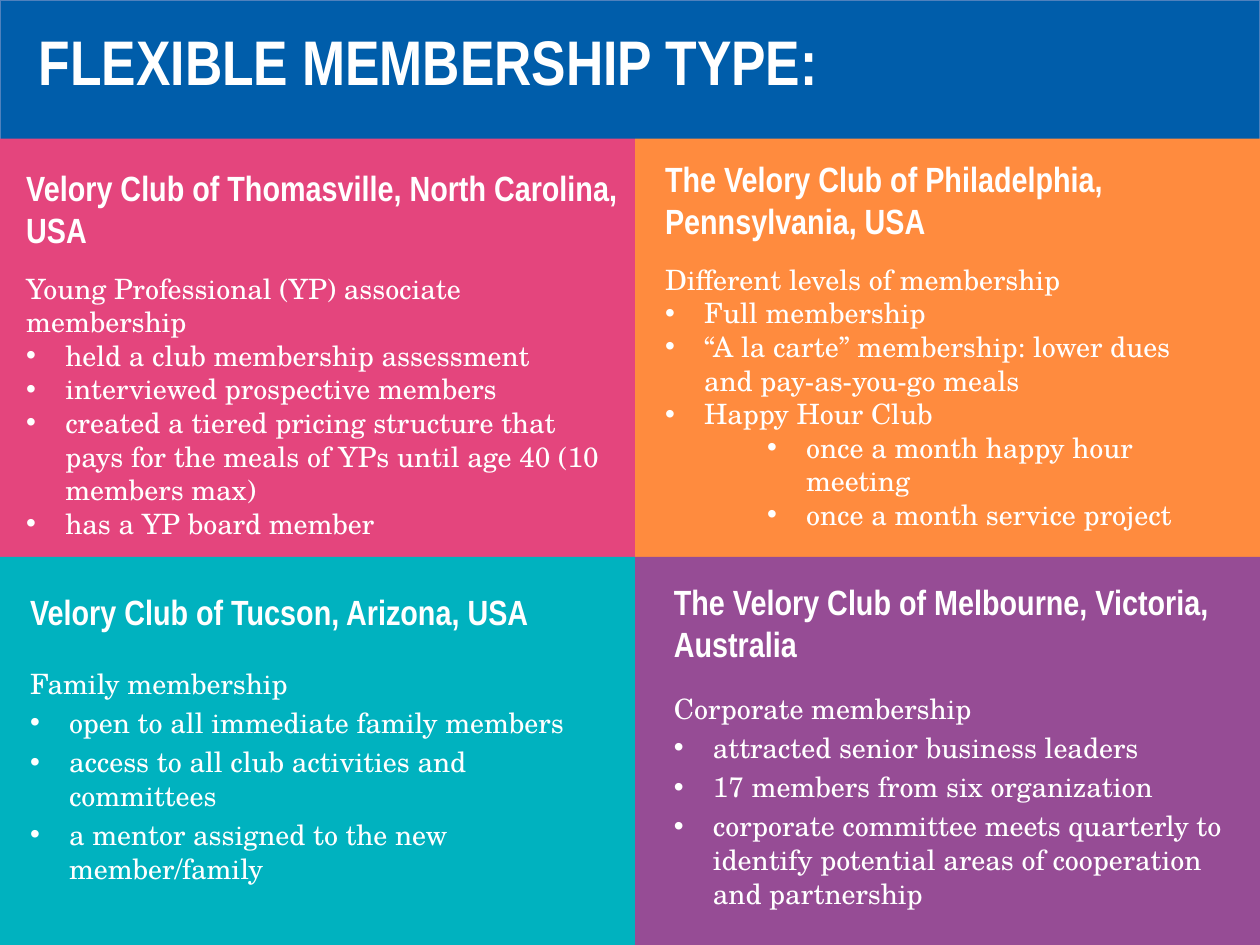
from dataclasses import dataclass

from lxml.etree import SubElement
from pptx import Presentation
from pptx.dml.color import RGBColor
from pptx.enum.shapes import MSO_SHAPE
from pptx.oxml.ns import qn
from pptx.util import Inches, Pt

SLIDE_WIDTH, SLIDE_HEIGHT = Inches(10), Inches(7.5)
COLORS = {
    "header": "005DAA",
    "header_line": "4F81BD",
    "pink": "E4457D",
    "orange": "FF8B3E",
    "teal": "00B2BF",
    "purple": "964C95",
    "text": "FFFFFF",
}
HEADING_FONT, BODY_FONT = "Arial Narrow", "TeX Gyre Schola"

# Panel grid, in percent of the slide
COLUMNS = (0, 50.4, 100)
ROWS = (14.67, 58.93, 100)
BULLET_HANG = Inches(0.31)
LEVEL_INDENTS = (Inches(0.31), Inches(1.12))


@dataclass
class Club:
    color: str
    column: int
    row: int
    text_box: tuple  # left, top, width, height in percent of the slide
    heading: str
    membership: str
    bullets: tuple  # (level, text)
    heading_gap: float = 12
    body_gap: float = 0


CLUBS = (
    Club("pink", 0, 0, (1.1, 16.93, 49.2, 42.67),
         "Velory Club of Thomasville, North Carolina, USA",
         "Young Professional (YP) associate membership",
         ((0, "held a club membership assessment"),
          (0, "interviewed prospective members"),
          (0, "created a tiered pricing structure that\n"
              "pays for the meals of YPs until age 40 (10 members max)"),
          (0, "has a YP board member"))),
    Club("orange", 1, 0, (51.8, 16, 46.1, 39.6),
         "The Velory Club of Philadelphia, Pennsylvania, USA",
         "Different levels of membership",
         ((0, "Full membership"),
          (0, "“A la carte” membership: lower dues and pay-as-you-go meals"),
          (0, "Happy Hour Club"),
          (1, "once a month happy hour meeting"),
          (1, "once a month service project"))),
    Club("teal", 0, 1, (1.4, 61.87, 46.6, 37.2),
         "Velory Club of Tucson, Arizona, USA",
         "Family membership",
         ((0, "open to all immediate family members"),
          (0, "access to all club activities and committees"),
          (0, "a mentor assigned to the new member/family")),
         heading_gap=16, body_gap=3.2),
    Club("purple", 1, 1, (52.5, 60.8, 47.5, 37.6),
         "The Velory Club of Melbourne, Victoria, Australia",
         "Corporate membership",
         ((0, "attracted senior business leaders"),
          (0, "17 members from six organization"),
          (0, "corporate committee meets quarterly to identify potential "
              "areas of cooperation and partnership")),
         body_gap=3.2),
)


def to_lengths(box):
    """Turn a box in percent of the slide into lengths."""
    left, top, width, height = box
    return (int(SLIDE_WIDTH * left / 100), int(SLIDE_HEIGHT * top / 100),
            int(SLIDE_WIDTH * width / 100), int(SLIDE_HEIGHT * height / 100))


def add_rectangle(slide, box, color, line_color=None):
    shape = slide.shapes.add_shape(MSO_SHAPE.RECTANGLE, *to_lengths(box))
    shape.shadow.inherit = False
    shape.fill.solid()
    shape.fill.fore_color.rgb = RGBColor.from_string(COLORS[color])
    if line_color:
        shape.line.color.rgb = RGBColor.from_string(COLORS[line_color])
        shape.line.width = Pt(0.75)
    else:
        shape.line.fill.background()


def add_text_frame(slide, box):
    text_frame = slide.shapes.add_textbox(*to_lengths(box)).text_frame
    text_frame.word_wrap = True
    return text_frame


def add_runs(paragraph, text, font_name, size, bold=False):
    """Add one run per line of the text, with line breaks between them."""
    for index, line in enumerate(text.split("\n")):
        if index:
            paragraph.add_line_break()
        run = paragraph.add_run()
        run.text = line
        run.font.name = font_name
        run.font.size = Pt(size)
        run.font.bold = bold
        run.font.color.rgb = RGBColor.from_string(COLORS["text"])


def add_bullet(paragraph, level):
    paragraph.level = level
    properties = paragraph._p.get_or_add_pPr()
    properties.set("marL", str(LEVEL_INDENTS[level]))
    properties.set("indent", str(-BULLET_HANG))
    SubElement(properties, qn("a:buFont")).set("typeface", "Arial")
    SubElement(properties, qn("a:buChar")).set("char", "•")


def add_header(slide, box, title_box):
    add_rectangle(slide, box, "header", "header_line")
    paragraph = add_text_frame(slide, title_box).paragraphs[0]
    paragraph.line_spacing = 0.8
    add_runs(paragraph, "FLEXIBLE MEMBERSHIP TYPE:", HEADING_FONT, 36, bold=True)


def add_club_panel(slide, box, club):
    add_rectangle(slide, box, club.color)
    text_frame = add_text_frame(slide, club.text_box)
    heading = text_frame.paragraphs[0]
    heading.space_after = Pt(club.heading_gap)
    add_runs(heading, club.heading, HEADING_FONT, 20, bold=True)

    for level, text in ((None, club.membership), *club.bullets):
        paragraph = text_frame.add_paragraph()
        if level is not None:
            add_bullet(paragraph, level)
        paragraph.space_before = Pt(club.body_gap)
        add_runs(paragraph, text, BODY_FONT, 16)


def main():
    presentation = Presentation()
    presentation.slide_width, presentation.slide_height = SLIDE_WIDTH, SLIDE_HEIGHT
    slide = presentation.slides.add_slide(presentation.slide_layouts[6])

    add_header(slide, (0, 0, 100, 18.8), (2.1, 3.33, 95.9, 12.8))
    for club in CLUBS:
        left, right = COLUMNS[club.column:club.column + 2]
        top, bottom = ROWS[club.row:club.row + 2]
        add_club_panel(slide, (left, top, right - left, bottom - top), club)

    presentation.save("out.pptx")


if __name__ == "__main__":
    main()
